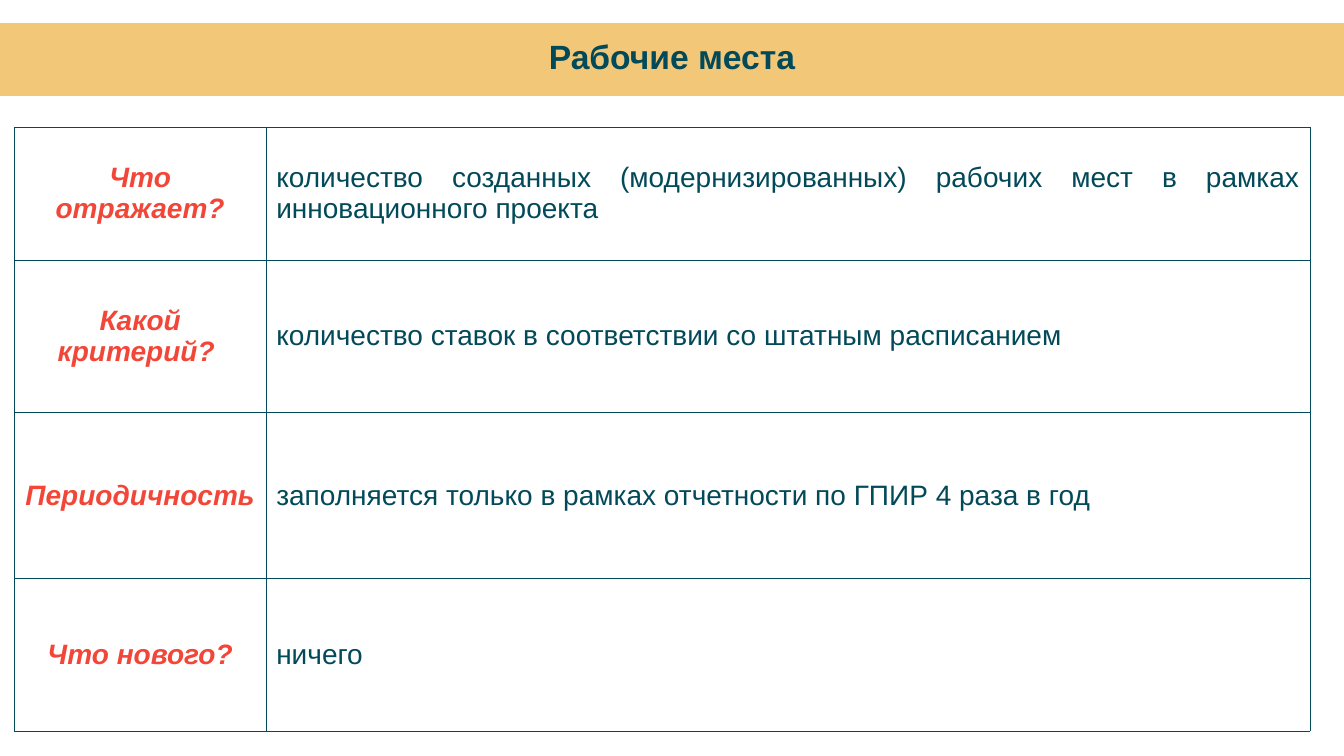
from dataclasses import dataclass

from lxml.etree import SubElement
from pptx import Presentation
from pptx.dml.color import RGBColor
from pptx.enum.shapes import MSO_SHAPE
from pptx.enum.text import MSO_ANCHOR, PP_ALIGN
from pptx.oxml.ns import qn
from pptx.util import Inches, Pt


@dataclass(frozen=True)
class Theme:
    font: str = "Arial"
    band: str = "F2C777"
    ink: str = "024959"
    accent: str = "F24738"
    title_size: int = 24
    body_size: int = 20
    band_line: float = 2.25
    border: float = 0.25


THEME = Theme()
COLUMN_WIDTHS = (2.5, 10.35)
ROW_HEIGHTS = (1.32, 1.51, 1.65, 1.51)
QUESTIONS = (
    ("Что отражает?",
     "количество созданных (модернизированных) рабочих мест в рамках инновационного проекта",
     PP_ALIGN.JUSTIFY),
    ("Какой критерий? ",
     "количество ставок в соответствии со штатным расписанием ",
     PP_ALIGN.JUSTIFY),
    ("Периодичность",
     "заполняется только в рамках отчетности по ГПИР 4 раза в год",
     PP_ALIGN.JUSTIFY),
    ("Что нового?", "ничего", PP_ALIGN.LEFT),
)


def write_text(paragraph, text, size, color, alignment, bold=False, italic=False):
    paragraph.alignment = alignment
    run = paragraph.add_run()
    run.text = text
    run.font.name = THEME.font
    run.font.size = Pt(size)
    run.font.bold = bold
    run.font.italic = italic
    run.font.color.rgb = RGBColor.from_string(color)


def draw_borders(cell):
    properties = cell._tc.get_or_add_tcPr()
    for position, side in enumerate(("a:lnL", "a:lnR", "a:lnT", "a:lnB")):
        line = properties.makeelement(qn(side), {"w": str(Pt(THEME.border))})
        fill = SubElement(line, qn("a:solidFill"))
        SubElement(fill, qn("a:srgbClr"), {"val": THEME.ink})
        # Border lines come before the cell fill
        properties.insert(position, line)


def add_title_band(slide, text, left, top, width, height):
    band = slide.shapes.add_shape(
        MSO_SHAPE.RECTANGLE, Inches(left), Inches(top), Inches(width), Inches(height))
    band.shadow.inherit = False
    band.fill.solid()
    band.fill.fore_color.rgb = RGBColor.from_string(THEME.band)
    band.line.color.rgb = RGBColor.from_string(THEME.band)
    band.line.width = Pt(THEME.band_line)
    band.text_frame.vertical_anchor = MSO_ANCHOR.MIDDLE
    paragraph = band.text_frame.paragraphs[0]
    paragraph.line_spacing = Pt(THEME.title_size)
    write_text(paragraph, text, THEME.title_size, THEME.ink, PP_ALIGN.CENTER, bold=True)


def add_question_table(slide, left, top, width, height):
    table = slide.shapes.add_table(
        len(QUESTIONS), len(COLUMN_WIDTHS),
        Inches(left), Inches(top), Inches(width), Inches(height)).table
    table.first_row = table.horz_banding = False

    # Column and row shares of the box
    for column, share in zip(table.columns, COLUMN_WIDTHS):
        column.width = Inches(width * share / sum(COLUMN_WIDTHS))
    for row, share in zip(table.rows, ROW_HEIGHTS):
        row.height = Inches(height * share / sum(ROW_HEIGHTS))

    # Questions on the left, answers on the right
    for row, (question, answer, alignment) in zip(table.rows, QUESTIONS):
        question_cell, answer_cell = row.cells
        write_text(question_cell.text_frame.paragraphs[0], question, THEME.body_size,
                   THEME.accent, PP_ALIGN.CENTER, bold=True, italic=True)
        write_text(answer_cell.text_frame.paragraphs[0], answer, THEME.body_size,
                   THEME.ink, alignment)
    for cell in table.iter_cells():
        cell.vertical_anchor = MSO_ANCHOR.MIDDLE
        cell.fill.background()
        draw_borders(cell)


def main():
    presentation = Presentation()
    presentation.slide_width = Inches(13.33)
    presentation.slide_height = Inches(7.5)
    slide = presentation.slides.add_slide(presentation.slide_layouts[6])
    add_title_band(slide, "Рабочие места", 0, 0.24, 13.33, 0.7)
    add_question_table(slide, 0.14, 1.26, 12.85, 5.99)
    presentation.save("out.pptx")


if __name__ == "__main__":
    main()
